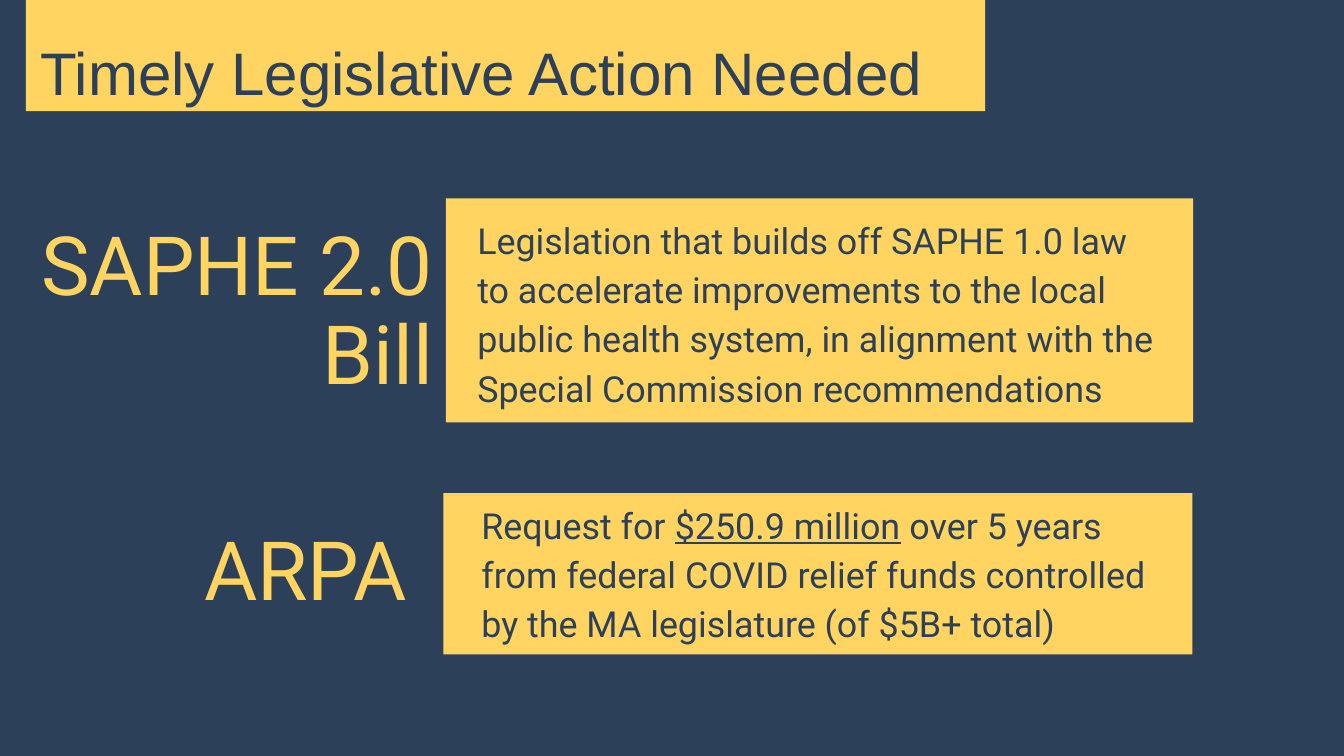
from dataclasses import dataclass

from pptx import Presentation, util as u
from pptx.dml import color
from pptx.enum import shapes, text

HUES = {"navy": "2D4059", "gold": "FFD460"}
HEAD = {"size": u.Pt(53.6), "name": "Arial"}
NAME = {"size": u.Pt(73), "name": "Roboto"}
BODY = {"size": u.Pt(32), "name": "Roboto"}


@dataclass
class Panel:
    """A gold block."""
    left: float
    top: float
    width: float
    height: float


@dataclass
class Label:
    """A text box; runs at odd places are underlined."""
    left: float
    top: float
    width: float
    height: float
    runs: tuple[str, ...]
    font: dict
    hue: str = "navy"
    lead: float = 1.15
    side: text.PP_ALIGN = text.PP_ALIGN.LEFT
    anchor: text.MSO_ANCHOR = text.MSO_ANCHOR.MIDDLE
    pad: tuple[float, float] = (0.17, 0.08)


TITLE = {"font": HEAD, "lead": 1.23, "pad": (0, 0), "anchor": text.MSO_ANCHOR.TOP}
TOPIC = {"font": NAME, "hue": "gold", "lead": 0.9, "side": text.PP_ALIGN.RIGHT}

PANELS = [
    Panel(0.32, 0, 11.9, 1.38),
    Panel(5.53, 2.46, 9.27, 2.78),
    Panel(5.5, 6.12, 9.29, 2),
]
LABELS = [
    Label(0.5, 0.24, 11.51, 0.9, ("Timely Legislative Action Needed",), **TITLE),
    Label(0, 2.89, 5.54, 2, ("SAPHE 2.0 Bill",), **TOPIC),
    Label(5.75, 2.71, 8.83, 2.29, (
        "Legislation that builds off SAPHE 1.0 law to accelerate improvements to the "
        "local public health system, in alignment with the Special Commission "
        "recommendations",), BODY),
    Label(1.57, 6.26, 3.65, 1.72, ("ARPA",), **TOPIC),
    Label(5.8, 6.3, 8.71, 1.57, (
        "Request for ", "$250.9 million",
        " over 5 years from federal COVID relief funds controlled by the MA "
        "legislature (of $5B+ total)"), BODY),
]


def tint(hue: str) -> color.RGBColor:
    """Look up a colour by name."""
    return color.RGBColor.from_string(HUES[hue])


def place(item: Panel | Label) -> list[u.Length]:
    """Give the place and size of an item."""
    return [u.Inches(n) for n in (item.left, item.top, item.width, item.height)]


def apply(target: object, form: dict) -> None:
    """Set each format value on the target."""
    for key, value in form.items():
        setattr(target, key, value)


def draw_panel(slide, panel: Panel) -> None:
    """Draw a gold block."""
    shape = slide.shapes.add_shape(shapes.MSO_SHAPE.RECTANGLE, *place(panel))
    shape.shadow.inherit = False
    shape.fill.solid()
    shape.fill.fore_color.rgb = tint("gold")
    shape.line.fill.background()


def draw_label(slide, label: Label) -> None:
    """Draw a text box."""
    frame = slide.shapes.add_textbox(*place(label)).text_frame
    wide, high = map(u.Inches, label.pad)
    apply(frame, {"word_wrap": True, "vertical_anchor": label.anchor,
                  "margin_left": wide, "margin_right": wide,
                  "margin_top": high, "margin_bottom": high})
    para = frame.paragraphs[0]
    apply(para, {"alignment": label.side, "line_spacing": label.lead})
    for spot, words in enumerate(label.runs):
        run = para.add_run()
        run.text = words
        apply(run.font, {**label.font, "underline": spot % 2 == 1})
        run.font.color.rgb = tint(label.hue)


def main() -> None:
    """Build and save the slide."""
    deck = Presentation()
    apply(deck, {"slide_width": u.Inches(16.67), "slide_height": u.Inches(9.38)})
    slide = deck.slides.add_slide(deck.slide_layouts[6])
    slide.background.fill.solid()
    slide.background.fill.fore_color.rgb = tint("navy")
    for panel in PANELS:
        draw_panel(slide, panel)
    for label in LABELS:
        draw_label(slide, label)
    deck.save("out.pptx")


if __name__ == "__main__":
    main()
